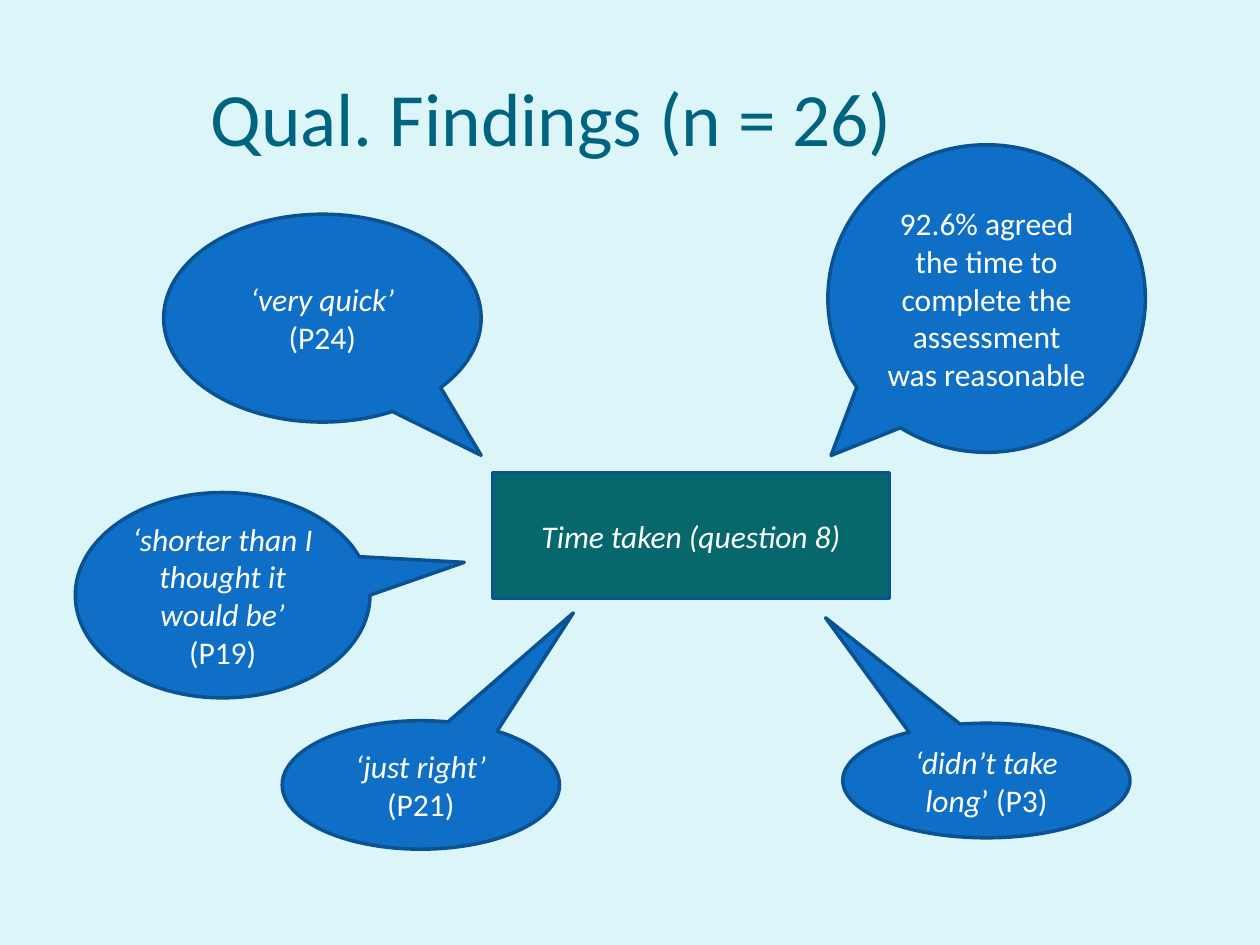
import pptx
import pptx.dml.color
import pptx.enum.shapes
import pptx.enum.text
import pptx.util

Cm, Pt = pptx.util.Cm, pptx.util.Pt
ALIGN = pptx.enum.text.PP_ALIGN
SHAPE = pptx.enum.shapes.MSO_SHAPE

# Content: boxes in cm (left, top, width, height); runs as (text, italic)
heading = "Qual. Findings (n = 26)"
heading_box = (3.99, 0.76, 20.83, 3.18)

topic = [("Time taken (question 8)", True)]
topic_box = (9.93, 9.53, 8, 2.54)

# Each comment: box, tail tip as a share of the size from the centre, runs
comments = [
    ((3.3, 4.32, 6.4, 4.19), (0.5, 0.66),
     [("‘very quick’", True), (" (P24)", False)]),
    ((16.69, 2.92, 6.4, 6.2), (-0.49, 0.51),
     [("92.6% agreed the time to complete the assessment was reasonable", False)]),
    ((5.69, 14.53, 5.59, 2.59), (0.55, -1.34),
     [("‘just right’", True), (" (P21)", False)]),
    ((16.99, 14.58, 5.79, 2.31), (-0.56, -1.42),
     [("‘didn’t take long", True), ("’ (P3)", False)]),
    ((1.52, 9.93, 5.94, 4.14), (0.82, -0.16),
     [("‘shorter than I thought it would be’", True), (" (P19)", False)]),
]

BACKGROUND, TITLE, WHITE = "DBF5F9", "00637F", "FFFFFF"
BLUE, OUTLINE, TEAL = "0F6FC6", "0B5292", "06686C"


def paint(target, color):
    """Give a fill a solid colour, or a font its colour."""
    rgb = pptx.dml.color.RGBColor.from_string(color)
    if hasattr(target, "solid"):
        target.solid()
        target.fore_color.rgb = rgb
    else:
        target.color.rgb = rgb


def write(frame, runs, size, color, align):
    frame.word_wrap = True
    frame.auto_size = pptx.enum.text.MSO_AUTO_SIZE.NONE
    frame.vertical_anchor = pptx.enum.text.MSO_ANCHOR.MIDDLE
    paragraph = frame.paragraphs[0]
    paragraph.alignment = align
    for text, italic in runs:
        run = paragraph.add_run()
        run.text = text
        run.font.name = "Calibri"
        run.font.size = Pt(size)
        run.font.italic = italic
        paint(run.font, color)


def add_box(slide, kind, box, fill, runs):
    shape = slide.shapes.add_shape(kind, *map(Cm, box))
    shape.shadow.inherit = False
    paint(shape.fill, fill)
    paint(shape.line.fill, OUTLINE)
    shape.line.width = Pt(2)
    write(shape.text_frame, runs, 18, WHITE, ALIGN.CENTER)
    return shape


def main():
    deck = pptx.Presentation()
    deck.slide_width, deck.slide_height = Cm(25.4), Cm(19.05)
    slide = deck.slides.add_slide(deck.slide_layouts[5])
    paint(slide.background.fill, BACKGROUND)

    # Title
    title = slide.shapes.title
    title.left, title.top, title.width, title.height = map(Cm, heading_box)
    write(title.text_frame, [(heading, False)], 43, TITLE, ALIGN.LEFT)

    # Topic, with the comments pointing at it
    add_box(slide, SHAPE.RECTANGLE, topic_box, TEAL, topic)
    for box, tip, runs in comments:
        callout = add_box(slide, SHAPE.OVAL_CALLOUT, box, BLUE, runs)
        callout.adjustments[0], callout.adjustments[1] = tip

    deck.save("out.pptx")


if __name__ == "__main__":
    main()
